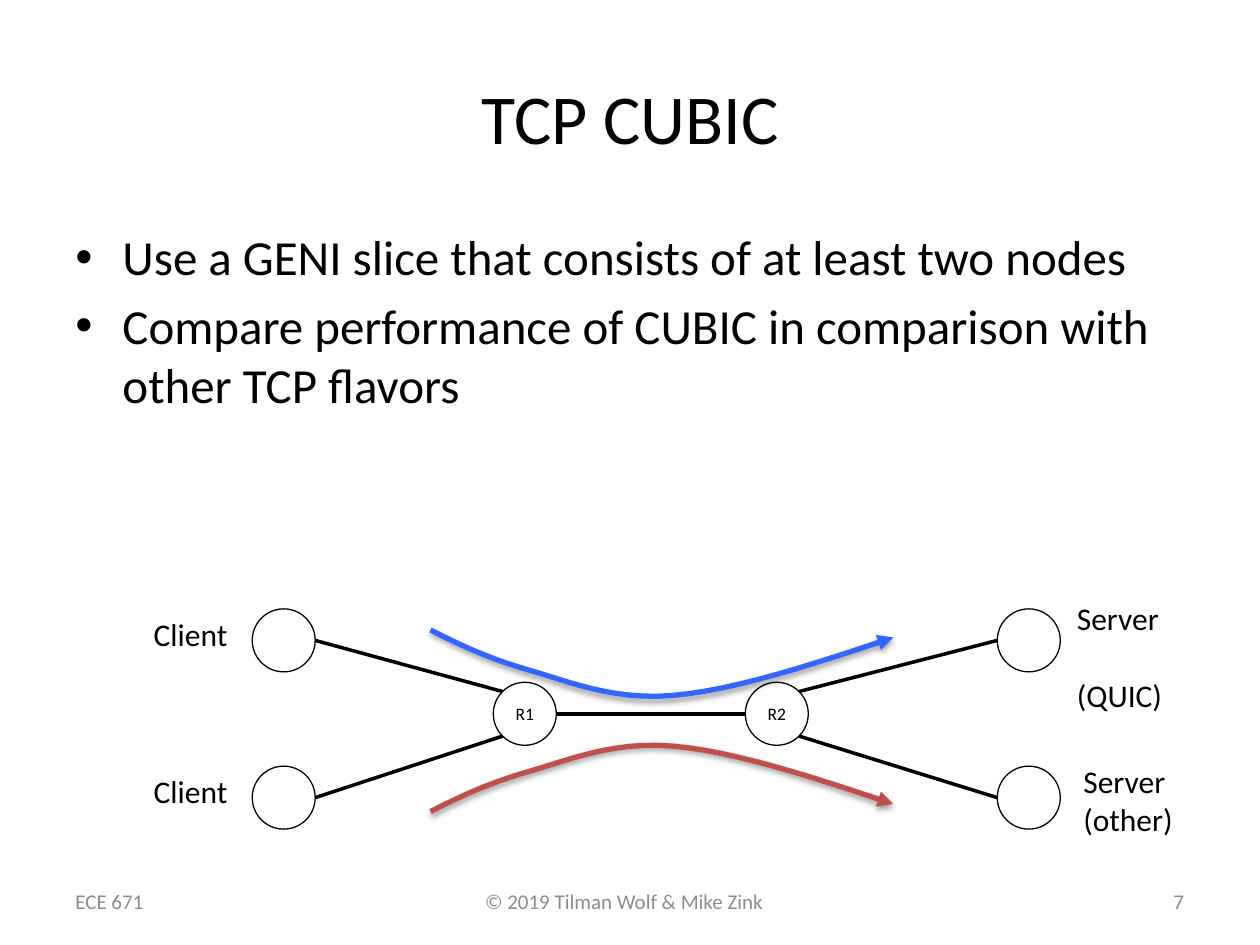
from lxml.etree import SubElement
from pptx import Presentation
from pptx.dml.color import RGBColor
from pptx.enum.shapes import MSO_CONNECTOR, MSO_SHAPE
from pptx.enum.text import MSO_ANCHOR, PP_ALIGN
from pptx.oxml.ns import qn
from pptx.util import Cm, Pt

BLACK = RGBColor(0, 0, 0)
WHITE = RGBColor(255, 255, 255)
GREY = RGBColor(0x8C, 0x8C, 0x8C)
BLUE = RGBColor(0x33, 0x66, 0xFF)
RED = RGBColor(0xC0, 0x50, 0x4D)

SIZE = 1.27
DIAG = SIZE / 2 * 0.5 ** 0.5
LEFT, RIGHT = 5.72, 20.74
HIGH, LOW = 12.91, 16.08
HUB_Y = 14.39
HUB_1, HUB_2 = 10.58, 15.66
AXIS = 14.53
FLOW = [(8.68, 12.7), (9.27, 13), (9.86, 13.28), (10.67, 13.51),
        (11.48, 13.74), (12.34, 14.12), (13.56, 14.02),
        (14.78, 13.92), (16.41, 13.39), (18.01, 12.85)]


def style(para, size, color=BLACK, align=PP_ALIGN.LEFT):
    font = para.font
    font.name = "Calibri"
    font.size = Pt(size)
    font.color.rgb = color
    para.alignment = align


def add_text(slide, lines, x, y, w, h, size, color=BLACK, align=PP_ALIGN.LEFT,
             anchor=MSO_ANCHOR.TOP, wrap=True, gap=0):
    box = slide.shapes.add_textbox(Cm(x), Cm(y), Cm(w), Cm(h))
    frame = box.text_frame
    frame.word_wrap = wrap
    frame.vertical_anchor = anchor
    frame.text = "\n".join(lines)
    for para in frame.paragraphs:
        style(para, size, color, align)
        para.space_before = Pt(gap)
    return frame


def add_list(slide, lines, x, y, w, h):
    frame = add_text(slide, lines, x, y, w, h, 28, gap=5.6)
    for para in frame.paragraphs:
        props = para._p.get_or_add_pPr()
        props.set("marL", str(Cm(0.95)))
        props.set("indent", str(-Cm(0.95)))
        SubElement(props, qn("a:buFont"), typeface="Arial")
        SubElement(props, qn("a:buChar"), char="•")


def add_node(slide, x, y, name=""):
    node = slide.shapes.add_shape(MSO_SHAPE.OVAL, Cm(x - SIZE / 2),
                                  Cm(y - SIZE / 2), Cm(SIZE), Cm(SIZE))
    node.shadow.inherit = False
    node.fill.solid()
    node.fill.fore_color.rgb = WHITE
    node.line.color.rgb = BLACK
    node.line.width = Pt(0.75)
    if name:
        frame = node.text_frame
        frame.margin_left = frame.margin_right = 0
        frame.vertical_anchor = MSO_ANCHOR.MIDDLE
        frame.text = name
        style(frame.paragraphs[0], 10, align=PP_ALIGN.CENTER)


def add_link(slide, x1, y1, x2, y2):
    link = slide.shapes.add_connector(MSO_CONNECTOR.STRAIGHT,
                                      Cm(x1), Cm(y1), Cm(x2), Cm(y2))
    link.line.color.rgb = BLACK
    link.line.width = Pt(2)
    SubElement(link._element.spPr, qn("a:effectLst"))


def trace(knots, steps=12):
    dots = [knots[0]]
    for i in range(0, len(knots) - 1, 3):
        for j in range(1, steps + 1):
            t = j / steps
            u = 1 - t
            parts = (u ** 3, 3 * u * u * t, 3 * u * t * t, t ** 3)
            dots.append(tuple(sum(p * k[n] for p, k in zip(parts, knots[i:i + 4]))
                              for n in (0, 1)))
    return [(Cm(x), Cm(y)) for x, y in dots]


def add_flow(slide, knots, color):
    first, *rest = trace(knots)
    pen = slide.shapes.build_freeform(*first)
    pen.add_line_segments(rest, close=False)
    flow = pen.convert_to_shape()
    flow.fill.background()
    flow.line.color.rgb = color
    flow.line.width = Pt(3)
    SubElement(flow.line._get_or_add_ln(), qn("a:tailEnd"), type="triangle")
    flow.shadow.inherit = False
    glow = SubElement(flow._element.spPr.find(qn("a:effectLst")), qn("a:outerShdw"),
                      blurRad="40000", dist="20000", dir="5400000", rotWithShape="0")
    tint = SubElement(glow, qn("a:srgbClr"), val="000000")
    SubElement(tint, qn("a:alpha"), val="38000")


def add_net(slide):
    half = SIZE / 2
    for x in (LEFT, RIGHT):
        for y in (HIGH, LOW):
            add_node(slide, x, y)
    add_node(slide, HUB_1, HUB_Y, "R1")
    add_node(slide, HUB_2, HUB_Y, "R2")
    add_link(slide, HUB_1 + half, HUB_Y, HUB_2 - half, HUB_Y)
    for y, side in ((HIGH, -DIAG), (LOW, DIAG)):
        add_link(slide, LEFT + half, y, HUB_1 - DIAG, HUB_Y + side)
        add_link(slide, HUB_2 + DIAG, HUB_Y + side, RIGHT - half, y)
        add_text(slide, ["Client"], 2.85, y - half, 2.03, 1.02, 18, wrap=False)
    add_text(slide, ["Server", "(QUIC)"], 21.46, 11.96, 2.26, 1.8, 18,
             wrap=False, gap=22)
    add_text(slide, ["Server", "(other)"], 21.59, 15.24, 2.34, 1.8, 18, wrap=False)
    add_flow(slide, [(x, 2 * AXIS - y) for x, y in FLOW], RED)
    add_flow(slide, FLOW, BLUE)


def add_foot(slide):
    mid = MSO_ANCHOR.MIDDLE
    add_text(slide, ["© 2019 Tilman Wolf & Mike Zink"], 9.53, 17.78, 6.2, 1.27,
             12, GREY, wrap=False)
    add_text(slide, ["ECE 671"], 1.27, 17.66, 5.92, 1.01, 12, GREY, anchor=mid)
    add_text(slide, ["7"], 18.2, 17.66, 5.92, 1.01, 12, GREY, PP_ALIGN.RIGHT, mid)


def main():
    deck = Presentation()
    deck.slide_width = Cm(25.4)
    deck.slide_height = Cm(19.05)
    slide = deck.slides.add_slide(deck.slide_layouts[6])
    add_text(slide, ["TCP CUBIC"], 1.27, 0.76, 22.86, 3.18, 40,
             align=PP_ALIGN.CENTER, anchor=MSO_ANCHOR.MIDDLE)
    add_list(slide, ["Use a GENI slice that consists of at least two nodes",
                     "Compare performance of CUBIC in comparison with other TCP flavors"],
             1.27, 4.45, 22.86, 5.28)
    add_net(slide)
    add_foot(slide)
    deck.save("out.pptx")


if __name__ == "__main__":
    main()
